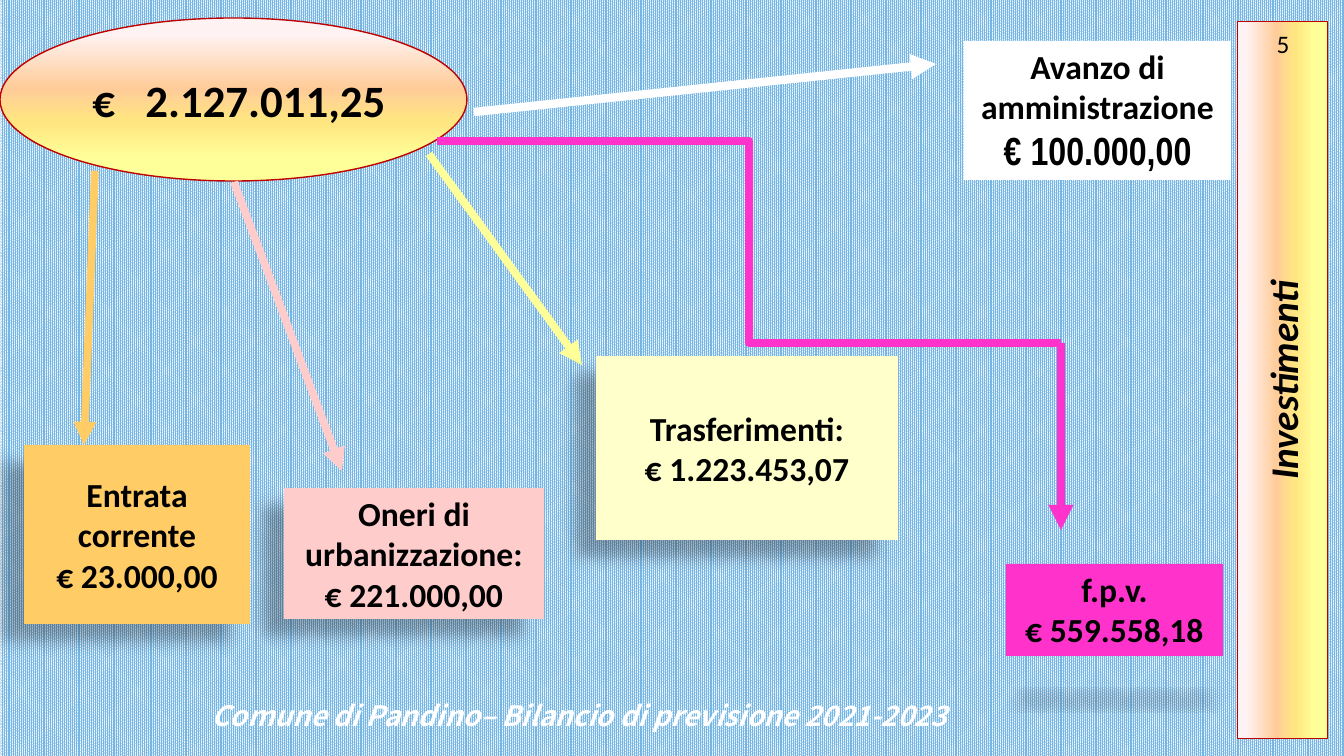
"""Build the slide on how the municipal investments are funded."""
from dataclasses import dataclass
from typing import Optional

import pptx
import pptx.dml.color
import pptx.enum.dml
import pptx.enum.shapes
import pptx.enum.text
import pptx.oxml
import pptx.oxml.ns
import pptx.util
from lxml import etree

RGBColor = pptx.dml.color.RGBColor
Shapes = pptx.enum.shapes.MSO_SHAPE
Lines = pptx.enum.shapes.MSO_CONNECTOR
Anchor = pptx.enum.text.MSO_ANCHOR
qn = pptx.oxml.ns.qn

EMU_PER_PX = 12192000 / 1344
BLACK = RGBColor(0x00, 0x00, 0x00)
WHITE = RGBColor(0xFF, 0xFF, 0xFF)
SKY = RGBColor(0x75, 0xB6, 0xE5)
DARK_RED = RGBColor(0xBD, 0x00, 0x00)
ORANGE = RGBColor(0xFF, 0xCC, 0x66)
PINK = RGBColor(0xFF, 0xCC, 0xCC)
YELLOW = RGBColor(0xFF, 0xFF, 0x99)
CREAM = RGBColor(0xFF, 0xFF, 0xCC)
MAGENTA = RGBColor(0xFF, 0x33, 0xCC)
BLUSH = RGBColor(0xFF, 0xF2, 0xF2)
PEACH = RGBColor(0xFF, 0xCC, 0x99)
GOLD = RGBColor(0xFF, 0xE6, 0x80)
GRADIENT = ((10, BLUSH), (43, PEACH), (64, GOLD), (86, YELLOW))


@dataclass(frozen=True)
class Frame:
    left: int
    top: int
    width: int
    height: int


@dataclass(frozen=True)
class Style:
    size: int = 24
    font: str = "Calibri"
    color: RGBColor = BLACK
    bold: bool = True
    italic: bool = False


@dataclass(frozen=True)
class Shadow:
    blur: float
    distance: float
    direction: int
    opacity: int
    width: int = 100
    height: int = 100
    align: str = "ctr"


@dataclass(frozen=True)
class Source:
    frame: Frame
    fill: RGBColor
    label: str
    amount: str
    shadow: Optional[Shadow] = None
    anchor: Anchor = Anchor.MIDDLE
    amount_style: Style = Style()


@dataclass(frozen=True)
class Arrow:
    start: tuple[int, int]
    end: tuple[int, int]
    color: RGBColor
    weight: float
    kind: Lines = Lines.STRAIGHT
    head: bool = True


SOFT = Shadow(11.8, 19.7, 141, 28)
BELOW = Shadow(12, 25, 90, 15, 90, -19, "b")
SOURCES = (
    Source(Frame(24, 445, 226, 179), ORANGE, "Entrata corrente", "€ 23.000,00", SOFT),
    Source(Frame(284, 488, 260, 131), PINK, "Oneri di urbanizzazione:", "€ 221.000,00", SOFT),
    Source(Frame(596, 356, 302, 184), CREAM, "Trasferimenti:", "€ 1.223.453,07", SOFT),
    Source(Frame(1006, 564, 217, 92), MAGENTA, "f.p.v.", "€ 559.558,18", BELOW, Anchor.TOP),
    Source(Frame(964, 41, 267, 139), WHITE, "Avanzo di amministrazione", "€ 100.000,00",
           None, Anchor.TOP, Style(28, "Arial Narrow")),
)
ARROWS = (
    Arrow((429, 154), (582, 365), YELLOW, 5.5),
    Arrow((234, 182), (342, 471), PINK, 5.5),
    Arrow((95, 171), (84, 445), ORANGE, 5.5),
    Arrow((474, 112), (936, 64), WHITE, 6),
    Arrow((437, 141), (1061, 343), MAGENTA, 6, Lines.ELBOW, False),
    Arrow((1061, 343), (1061, 530), MAGENTA, 6),
)


def px(length: int) -> int:
    """Turn px into EMU."""
    return round(length * EMU_PER_PX)


def place(frame: Frame) -> tuple[int, int, int, int]:
    """Turn a frame into EMU."""
    return px(frame.left), px(frame.top), px(frame.width), px(frame.height)


def write(shape, lines: list[tuple[str, Style]], anchor: Anchor) -> None:
    """Fill a shape with centred paragraphs."""
    frame = shape.text_frame
    frame.word_wrap = True
    frame.vertical_anchor = anchor
    frame.text = "\n".join(text for text, _ in lines)
    for para, (_, style) in zip(frame.paragraphs, lines):
        para.alignment = pptx.enum.text.PP_ALIGN.CENTER
        for span in para.runs:
            span.font.size = pptx.util.Pt(style.size)
            span.font.name = style.font
            span.font.color.rgb = style.color
            span.font.bold = style.bold
            span.font.italic = style.italic


def add_shadow(shape, shadow: Shadow) -> None:
    """Give a shape an outer shadow."""
    effects = shape._element.spPr.find(qn("a:effectLst"))
    outer = etree.SubElement(effects, qn("a:outerShdw"), {
        "blurRad": str(pptx.util.Pt(shadow.blur)), "dist": str(pptx.util.Pt(shadow.distance)),
        "dir": str(shadow.direction * 60000), "sx": str(shadow.width * 1000),
        "sy": str(shadow.height * 1000), "algn": shadow.align, "rotWithShape": "0"})
    color = etree.SubElement(outer, qn("a:srgbClr"), val=str(BLACK))
    etree.SubElement(color, qn("a:alpha"), val=str(shadow.opacity * 1000))


def add_source(page, source: Source) -> None:
    """Draw one funding source."""
    box = page.shapes.add_shape(Shapes.RECTANGLE, *place(source.frame))
    box.shadow.inherit = False
    box.fill.solid()
    box.fill.fore_color.rgb = source.fill
    box.line.fill.background()
    if source.shadow:
        add_shadow(box, source.shadow)
    write(box, [(source.label, Style()), (source.amount, source.amount_style)], source.anchor)


def add_gradient_shape(page, kind: Shapes, frame: Frame, text: str, style: Style):
    """Draw a shape with the warm gradient."""
    shape = page.shapes.add_shape(kind, *place(frame))
    shape.shadow.inherit = False
    shape.fill.gradient()
    gradient = shape._element.spPr.find(qn("a:gradFill"))
    gradient.find(qn("a:lin")).set("ang", "5400000")
    stops = gradient.find(qn("a:gsLst"))
    for stop in list(stops):
        stops.remove(stop)
    for position, color in GRADIENT:
        stop = etree.SubElement(stops, qn("a:gs"), pos=str(position * 1000))
        etree.SubElement(stop, qn("a:srgbClr"), val=str(color))
    shape.line.color.rgb = DARK_RED
    shape.line.width = pptx.util.Pt(1)
    write(shape, [(text, style)], Anchor.MIDDLE)
    return shape


def add_arrow(page, arrow: Arrow) -> None:
    """Draw one connector."""
    line = page.shapes.add_connector(arrow.kind, *map(px, arrow.start + arrow.end))
    line.line.color.rgb = arrow.color
    line.line.width = pptx.util.Pt(arrow.weight)
    properties = line._element.spPr
    if arrow.head:
        etree.SubElement(properties.find(qn("a:ln")), qn("a:tailEnd"), type="triangle")
    etree.SubElement(properties, qn("a:effectLst"))


def add_text(page, frame: Frame, text: str, style: Style):
    """Draw a line of text and return its paragraph."""
    box = page.shapes.add_textbox(*place(frame))
    write(box, [(text, style)], Anchor.TOP)
    return box.text_frame.paragraphs[0]


def main() -> None:
    """Build and save the deck."""
    deck = pptx.Presentation()
    deck.slide_width, deck.slide_height = px(1344), px(756)
    page = deck.slides.add_slide(deck.slide_layouts[6])
    backdrop = page.background.fill
    backdrop.patterned()
    backdrop.pattern = pptx.enum.dml.MSO_PATTERN.PERCENT_90
    backdrop.fore_color.rgb = SKY
    backdrop.back_color.rgb = WHITE

    total = add_gradient_shape(page, Shapes.OVAL, Frame(0, 18, 467, 163),
                               "€   2.127.011,25", Style(32))
    total.text_frame.margin_left = px(21)
    for arrow in ARROWS:
        add_arrow(page, arrow)
    for source in SOURCES:
        add_source(page, source)
    strip = add_gradient_shape(page, Shapes.RECTANGLE, Frame(924, 335, 717, 90),
                               "Investimenti", Style(28, italic=True))
    strip.rotation = 270
    add_text(page, Frame(1250, 23, 66, 40), "5", Style(18, bold=False))
    footer = add_text(page, Frame(19, 700, 1121, 39),
                      "Comune di Pandino– Bilancio di previsione 2021-2023",
                      Style(20, "Noto Sans CJK KR", WHITE, italic=True))
    footer.line_spacing = 0.8
    footer.space_before = pptx.util.Pt(10)
    deck.save("out.pptx")


if __name__ == "__main__":
    main()
